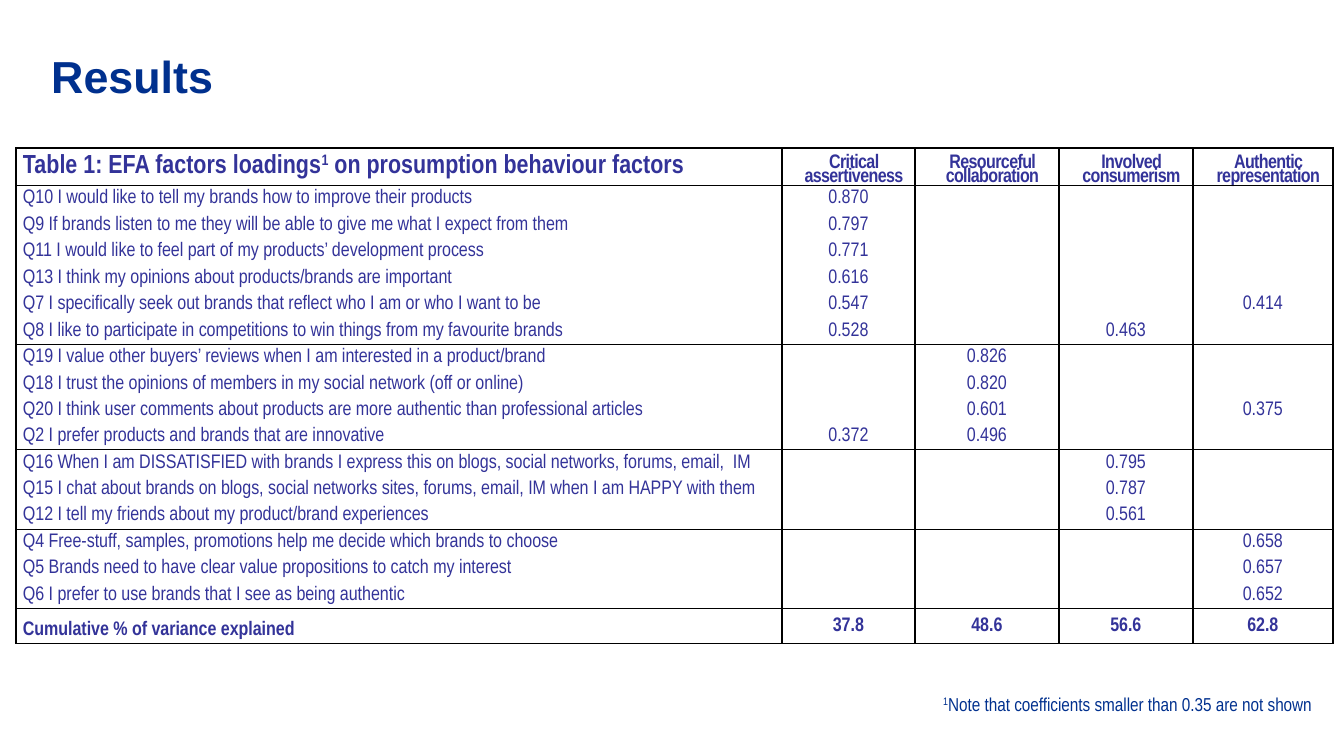
from dataclasses import dataclass
from itertools import pairwise

import pptx
import pptx.dml.color
import pptx.enum.text
import pptx.oxml
import pptx.oxml.ns
import pptx.util

PX = 914400 / 134.4
NAVY, INDIGO, BLACK = "00308E", "333399", "000000"
NARROW = "Arial Narrow"
PP_ALIGN = pptx.enum.text.PP_ALIGN
ANCHOR = pptx.enum.text.MSO_ANCHOR

COLUMN_EDGES = [16, 782, 915, 1059, 1193, 1333]
TABLE_TOP, BODY_TOP, BODY_BOTTOM, TABLE_BOTTOM = 148, 184, 607, 634
CELL_INSET = 7

FACTORS = ["Critical assertiveness", "Resourceful collaboration",
           "Involved consumerism", "Authentic representation"]
VARIANCE = ["37.8", "48.6", "56.6", "62.8"]


@dataclass
class Item:
    question: str
    loadings: dict[int, str]  # factor column -> loading


@dataclass
class Style:
    size: float
    color: str = INDIGO
    font: str = NARROW
    bold: bool = False
    align: PP_ALIGN = PP_ALIGN.LEFT
    line_spacing: float | None = None
    tracking: int = 0  # hundredths of a point
    indent: int = 0


BLOCKS = [
    [Item("Q10 I would like to tell my brands how to improve their products", {1: "0.870"}),
     Item("Q9 If brands listen to me they will be able to give me what I expect from them",
          {1: "0.797"}),
     Item("Q11 I would like to feel part of my products’ development process", {1: "0.771"}),
     Item("Q13 I think my opinions about products/brands are important", {1: "0.616"}),
     Item("Q7 I specifically seek out brands that reflect who I am or who I want to be",
          {1: "0.547", 4: "0.414"}),
     Item("Q8 I like to participate in competitions to win things from my favourite brands",
          {1: "0.528", 3: "0.463"})],
    [Item("Q19 I value other buyers’ reviews when I am interested in a product/brand",
          {2: "0.826"}),
     Item("Q18 I trust the opinions of members in my social network (off or online)",
          {2: "0.820"}),
     Item("Q20 I think user comments about products are more authentic than professional articles",
          {2: "0.601", 4: "0.375"}),
     Item("Q2 I prefer products and brands that are innovative", {1: "0.372", 2: "0.496"})],
    [Item("Q16 When I am DISSATISFIED with brands I express this on blogs, social networks, "
          "forums, email,  IM", {3: "0.795"}),
     Item("Q15 I chat about brands on blogs, social networks sites, forums, email, "
          "IM when I am HAPPY with them", {3: "0.787"}),
     Item("Q12 I tell my friends about my product/brand experiences", {3: "0.561"})],
    [Item("Q4 Free-stuff, samples, promotions help me decide which brands to choose",
          {4: "0.658"}),
     Item("Q5 Brands need to have clear value propositions to catch my interest",
          {4: "0.657"}),
     Item("Q6 I prefer to use brands that I see as being authentic", {4: "0.652"})],
]

TITLE = Style(24, NAVY, "Arial", True)
NOTE = Style(10, NAVY, align=PP_ALIGN.JUSTIFY)
CAPTION = Style(14, bold=True)
FACTOR = Style(10.5, bold=True, align=PP_ALIGN.CENTER, line_spacing=0.8,
               tracking=-30, indent=11)
QUESTION = Style(10.5)
LOADING = Style(10.5, align=PP_ALIGN.CENTER)
TOTAL_LABEL = Style(10.5, bold=True, line_spacing=1.5)
TOTAL = Style(10.5, bold=True, align=PP_ALIGN.CENTER, line_spacing=1.5)


def px(n: int) -> int:
    return round(n * PX)


def rgb(color: str) -> pptx.dml.color.RGBColor:
    return pptx.dml.color.RGBColor.from_string(color)


def write(tf, text: str, style: Style) -> None:
    """Fill the first paragraph; text between carets is superscript."""
    p = tf.paragraphs[0]
    p.alignment = style.align
    if style.line_spacing:
        p.line_spacing = style.line_spacing
    if style.indent:
        p._p.get_or_add_pPr().set("marL", str(px(style.indent)))
    p.font.size = pptx.util.Pt(style.size)
    p.font.name = style.font
    p.font.bold = style.bold
    p.font.color.rgb = rgb(style.color)
    for i, part in enumerate(text.split("^")):
        if part:
            r = p.add_run()
            r.text = part
            rPr = r._r.get_or_add_rPr()
            if i % 2:
                rPr.set("baseline", "30000")
            if style.tracking:
                rPr.set("spc", str(style.tracking))
    if not text:
        end = pptx.oxml.parse_xml(f'<a:endParaRPr {pptx.oxml.ns.nsdecls("a")}/>')
        end.set("sz", str(round(style.size * 100)))
        p._p.append(end)


def add_text(s, left: int, top: int, width: int, height: int, text: str,
             style: Style, wrap: bool) -> None:
    tf = s.shapes.add_textbox(px(left), px(top), px(width), px(height)).text_frame
    tf.word_wrap = wrap
    tf.vertical_anchor = ANCHOR.MIDDLE
    write(tf, text, style)


def set_borders(cell, sides: str) -> None:
    """Draw the sides named by the letters L, R, T and B and blank the others."""
    tcPr = cell._tc.get_or_add_tcPr()
    for i, side in enumerate("LRTB"):
        paint = (f'<a:solidFill><a:srgbClr val="{BLACK}"/></a:solidFill>'
                 if side in sides else "<a:noFill/>")
        tcPr.insert(i, pptx.oxml.parse_xml(
            f'<a:ln{side} {pptx.oxml.ns.nsdecls("a")} w="12700">{paint}</a:ln{side}>'))


def fill_row(row, texts: list[str], first: Style, rest: Style, sides: str,
             rest_anchor: ANCHOR = ANCHOR.MIDDLE) -> None:
    for c, (cell, text) in enumerate(zip(row.cells, texts)):
        cell.margin_left = cell.margin_right = px(CELL_INSET)
        cell.margin_top = cell.margin_bottom = 0
        cell.vertical_anchor = rest_anchor if c else ANCHOR.MIDDLE
        cell.fill.background()
        set_borders(cell, sides)
        write(cell.text_frame, text, rest if c else first)


def add_loadings_table(s) -> None:
    count = sum(len(block) for block in BLOCKS)
    step = (BODY_BOTTOM - BODY_TOP) / count
    row_edges = ([TABLE_TOP] + [round(BODY_TOP + i * step) for i in range(count + 1)]
                 + [TABLE_BOTTOM])
    table = s.shapes.add_table(
        count + 2, len(COLUMN_EDGES) - 1, px(COLUMN_EDGES[0]), px(TABLE_TOP),
        px(COLUMN_EDGES[-1] - COLUMN_EDGES[0]), px(TABLE_BOTTOM - TABLE_TOP)).table
    table.first_row = table.horz_banding = False
    for column, (a, b) in zip(table.columns, pairwise(COLUMN_EDGES)):
        column.width = px(b - a)
    for row, (a, b) in zip(table.rows, pairwise(row_edges)):
        row.height = px(b - a)

    rows = iter(table.rows)
    fill_row(next(rows), ["Table 1: EFA factors loadings^1^ on prosumption behaviour factors",
                          *FACTORS], CAPTION, FACTOR, "LRTB", ANCHOR.BOTTOM)
    for block in BLOCKS:
        for item in block:
            sides = "LR" + "T" * (item is block[0]) + "B" * (item is block[-1])
            loadings = [item.loadings.get(c, "") for c in range(1, len(FACTORS) + 1)]
            fill_row(next(rows), [item.question, *loadings], QUESTION, LOADING, sides)
    fill_row(next(rows), ["Cumulative % of variance explained", *VARIANCE],
             TOTAL_LABEL, TOTAL, "LRTB", ANCHOR.TOP)


def main() -> None:
    prs = pptx.Presentation()
    prs.slide_width, prs.slide_height = px(1344), px(756)
    s = prs.slides.add_slide(prs.slide_layouts[6])
    add_text(s, 38, 26, 1259, 99, "Results", TITLE, True)
    add_loadings_table(s)
    add_text(s, 930, 686, 398, 36,
             "^1^Note that coefficients smaller than 0.35 are not shown", NOTE, False)
    prs.save("out.pptx")


if __name__ == "__main__":
    main()
